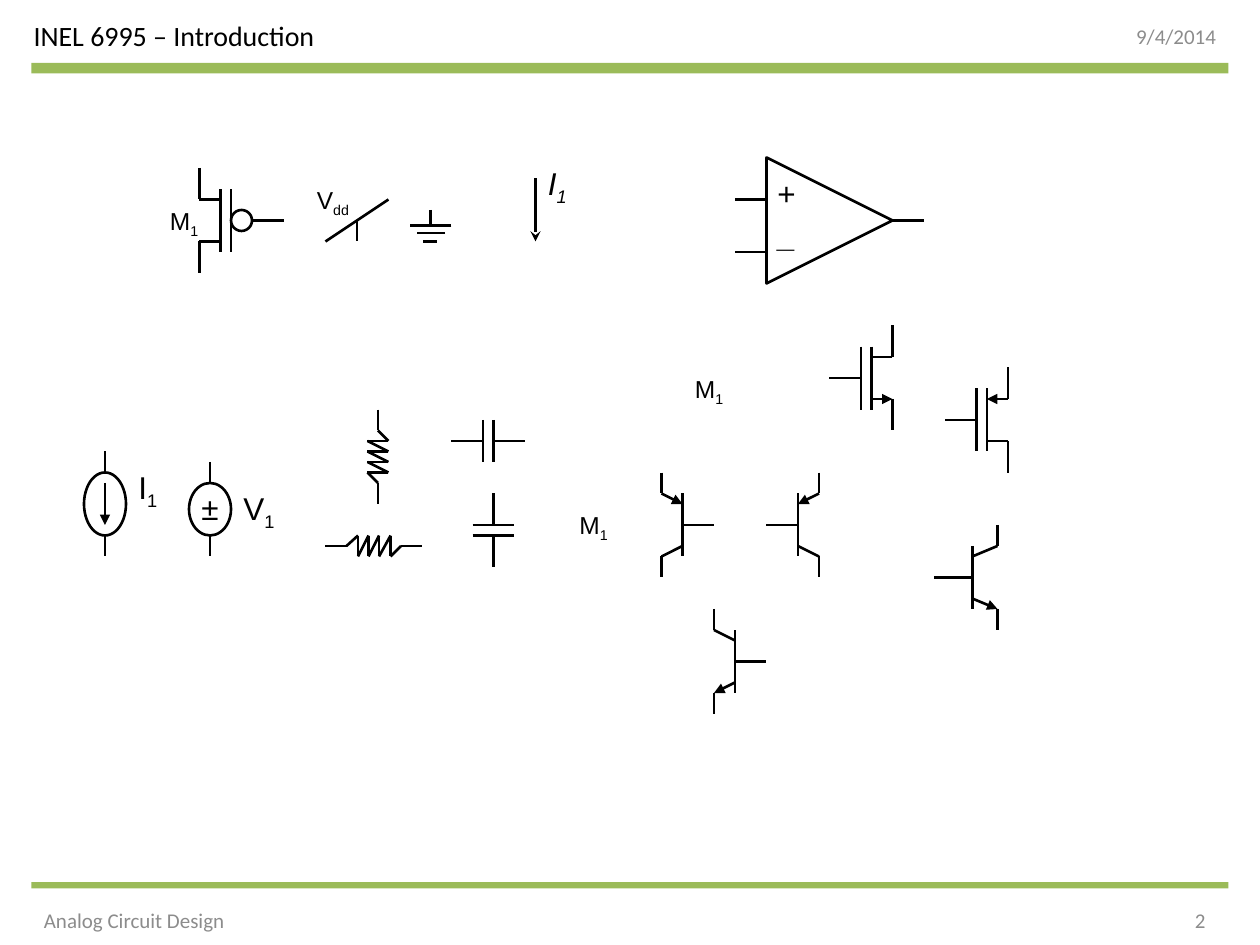
"""Build a slide of analog circuit symbols on a ten-pixel grid."""
from dataclasses import dataclass
from itertools import pairwise

from lxml.etree import SubElement
from pptx import Presentation
from pptx.dml.color import RGBColor
from pptx.enum.shapes import MSO_CONNECTOR as Connector, MSO_SHAPE as Shape
from pptx.enum.text import MSO_ANCHOR as Anchor, MSO_AUTO_SIZE as AutoSize, PP_ALIGN as Align
from pptx.oxml.ns import qn
from pptx.util import Pt

PX = 7620


@dataclass(frozen=True)
class Theme:
    ink: RGBColor = RGBColor(0x00, 0x00, 0x00)
    muted: RGBColor = RGBColor(0x8C, 0x8C, 0x8C)
    accent: RGBColor = RGBColor(0x9B, 0xBB, 0x59)
    heading_font: str = "Calibri"
    symbol_font: str = "Arial"
    title_size: Pt = Pt(16)
    footer_size: Pt = Pt(12)
    large_label: Pt = Pt(18)
    small_label: Pt = Pt(14)
    stroke: Pt = Pt(1.5)


theme = Theme()


def draw_wire(shapes, *points, arrow=None):
    for start, end in pairwise(points):
        wire = shapes.add_connector(Connector.STRAIGHT, *(PX * n for n in start + end))
        wire.line.color.rgb = theme.ink
        wire.line.width = theme.stroke
        properties = wire._element.spPr
        SubElement(properties, qn("a:effectLst"))
        if arrow and end == points[-1]:
            SubElement(wire.line._get_or_add_ln(), qn("a:tailEnd"), type=arrow)


def add_label(shapes, box, text, subscript="", size=theme.large_label, italic=False, wrap=False):
    label = shapes.add_textbox(*(PX * n for n in box))
    frame = label.text_frame
    frame.word_wrap = wrap
    frame.auto_size = AutoSize.SHAPE_TO_FIT_TEXT
    paragraph = frame.paragraphs[0]
    paragraph.text = text
    if subscript:
        lowered = paragraph.add_run()
        lowered.text = subscript
        lowered._r.get_or_add_rPr().set("baseline", "-25000")
    for run in paragraph.runs:
        run.font.name = theme.symbol_font
        run.font.size = size
        run.font.italic = italic or None
        run.font.color.rgb = theme.ink


presentation = Presentation()
presentation.slide_width = 1200 * PX
presentation.slide_height = 900 * PX
slide = presentation.slides.add_slide(presentation.slide_layouts[5])

for top, height in ((60, 10), (840, 6)):
    bar = slide.shapes.add_shape(Shape.RECTANGLE, 30 * PX, top * PX, 1140 * PX, height * PX)
    bar.shadow.inherit = False
    bar.fill.solid()
    bar.fill.fore_color.rgb = theme.accent
    bar.line.fill.background()

title = slide.shapes.title
title.left, title.top, title.width, title.height = (PX * n for n in (20, 10, 400, 48))
date = slide.shapes.add_textbox(890 * PX, 10 * PX, 280 * PX, 48 * PX)
page_number = slide.shapes.add_textbox(880 * PX, 852 * PX, 280 * PX, 48 * PX)
course = slide.shapes.add_textbox(30 * PX, 852 * PX, 210 * PX, 48 * PX)
for shape, text, size, color, alignment in (
    (title, "INEL 6995 – Introduction", theme.title_size, theme.ink, Align.LEFT),
    (date, "9/4/2014", theme.footer_size, theme.muted, Align.RIGHT),
    (page_number, "2", theme.footer_size, theme.muted, Align.RIGHT),
    (course, "Analog Circuit Design", theme.footer_size, theme.muted, Align.LEFT),
):
    frame = shape.text_frame
    frame.text = text
    frame.word_wrap = True
    frame.auto_size = AutoSize.NONE
    frame.vertical_anchor = Anchor.MIDDLE
    paragraph = frame.paragraphs[0]
    paragraph.alignment = alignment
    font = paragraph.runs[0].font
    font.name, font.size, font.color.rgb = theme.heading_font, size, color

ground = slide.shapes.add_group_shape().shapes
draw_wire(ground, (410, 200), (410, 215))
for left, right, y in ((390, 430, 215), (397, 424, 222), (403, 416, 230)):
    draw_wire(ground, (right, y), (left, y))

flat_capacitor = slide.shapes.add_group_shape().shapes
for plate, lead_end in ((460, 430), (470, 500)):
    draw_wire(flat_capacitor, (plate, 400), (plate, 440))
    draw_wire(flat_capacitor, (plate, 420), (lead_end, 420))

upright_capacitor = slide.shapes.add_group_shape().shapes
for plate, lead_end in ((500, 470), (510, 540)):
    draw_wire(upright_capacitor, (450, plate), (490, plate))
    draw_wire(upright_capacitor, (470, plate), (470, lead_end))

current_source = slide.shapes.add_group_shape().shapes
voltage_source = slide.shapes.add_group_shape().shapes
pmos_bubble = slide.shapes.add_group_shape().shapes
op_amp = slide.shapes.add_group_shape().shapes
for shapes, kind, box, rotation in (
    (current_source, Shape.OVAL, (80, 450, 40, 60), 0),
    (voltage_source, Shape.OVAL, (180, 460, 40, 50), 0),
    (pmos_bubble, Shape.OVAL, (220, 200, 20, 20), 0),
    (op_amp, Shape.ISOSCELES_TRIANGLE, (730, 150, 120, 120), 90),
):
    outline = shapes.add_shape(kind, *(PX * n for n in box))
    outline.rotation = rotation
    outline.shadow.inherit = False
    outline.fill.background()
    outline.line.color.rgb = theme.ink
    outline.line.width = theme.stroke

for shapes, x, top in ((current_source, 100, 430), (voltage_source, 200, 440)):
    draw_wire(shapes, (x, top), (x, top + 20))
    draw_wire(shapes, (x, 510), (x, 530))
draw_wire(current_source, (100, 460), (100, 500), arrow="triangle")
add_label(current_source, (120, 440, 43, 48), "I", "1")
add_label(voltage_source, (220, 460, 55, 48), "V", "1")
add_label(voltage_source, (180, 460, 40, 48), "±", wrap=True)

current_arrow = slide.shapes.add_group_shape().shapes
draw_wire(current_arrow, (510, 170), (510, 230), arrow="stealth")
add_label(current_arrow, (510, 150, 43, 48), "I", "1", italic=True)

for start, end, y in ((730, 700, 240), (730, 700, 190), (880, 850, 210)):
    draw_wire(op_amp, (start, y), (end, y))
add_label(op_amp, (728, 160, 42, 48), "+", italic=True)
add_label(op_amp, (730, 200, 41, 48), "_", italic=True)

upright_resistor = slide.shapes.add_group_shape().shapes
zigzag = [(x, y) for y in range(420, 460, 10) for x in (370, 350)]
draw_wire(upright_resistor, (360, 390), (360, 410), *zigzag, (360, 460), (360, 480))

flat_resistor = slide.shapes.add_group_shape().shapes
zigzag = [(x, y) for x in (341, 351, 361, 372) for y in (510, 530)]
draw_wire(flat_resistor, (310, 520), (330, 520), *zigzag, (382, 520), (402, 520))

draw_wire(pmos_bubble, (190, 160), (190, 190), (210, 190))
draw_wire(pmos_bubble, (190, 260), (190, 230), (210, 230))
for x in (210, 220):
    draw_wire(pmos_bubble, (x, 180), (x, 240))
draw_wire(pmos_bubble, (240, 210), (270, 210))
add_label(pmos_bubble, (150, 190, 53, 41), "M", "1", theme.small_label)

supply = slide.shapes.add_group_shape().shapes
draw_wire(supply, (340, 210), (340, 230))
draw_wire(supply, (370, 190), (310, 230))
add_label(supply, (290, 170, 58, 41), "V", "dd", theme.small_label)

for x, top, is_pmos in ((850, 310, False), (960, 350, True)):
    mosfet = slide.shapes.add_group_shape().shapes
    drain, source = (x, top + 30), (x, top + 70)
    draw_wire(mosfet, (x, top), drain)
    draw_wire(mosfet, source, (x, top + 100))
    draw_wire(mosfet, drain, (x - 20, top + 30), arrow="triangle" if is_pmos else None)
    draw_wire(mosfet, (x - 20, top + 70), source, arrow=None if is_pmos else "triangle")
    for plate in (x - 20, x - 30):
        draw_wire(mosfet, (plate, top + 20), (plate, top + 80))
    draw_wire(mosfet, (x - 30, top + 50), (x - 60, top + 50))

for x, top, base, lead_end, is_pnp in (
    (630, 450, 650, 680, True),
    (680, 580, 700, 730, False),
    (950, 500, 926, 890, False),
    (780, 450, 760, 730, True),
):
    bipolar = slide.shapes.add_group_shape().shapes
    upper, lower = (x, top + 20), (x, top + 80)
    draw_wire(bipolar, (x, top), upper)
    draw_wire(bipolar, lower, (x, top + 100))
    draw_wire(bipolar, upper, (base, top + 30), arrow="triangle" if is_pnp else None)
    draw_wire(bipolar, (base, top + 70), lower, arrow=None if is_pnp else "triangle")
    draw_wire(bipolar, (base, top + 20), (base, top + 80))
    draw_wire(bipolar, (base, top + 50), (lead_end, top + 50))

for left, top in ((650, 350), (540, 480)):
    add_label(slide.shapes, (left, top, 53, 41), "M", "1", theme.small_label)

presentation.save("out.pptx")
